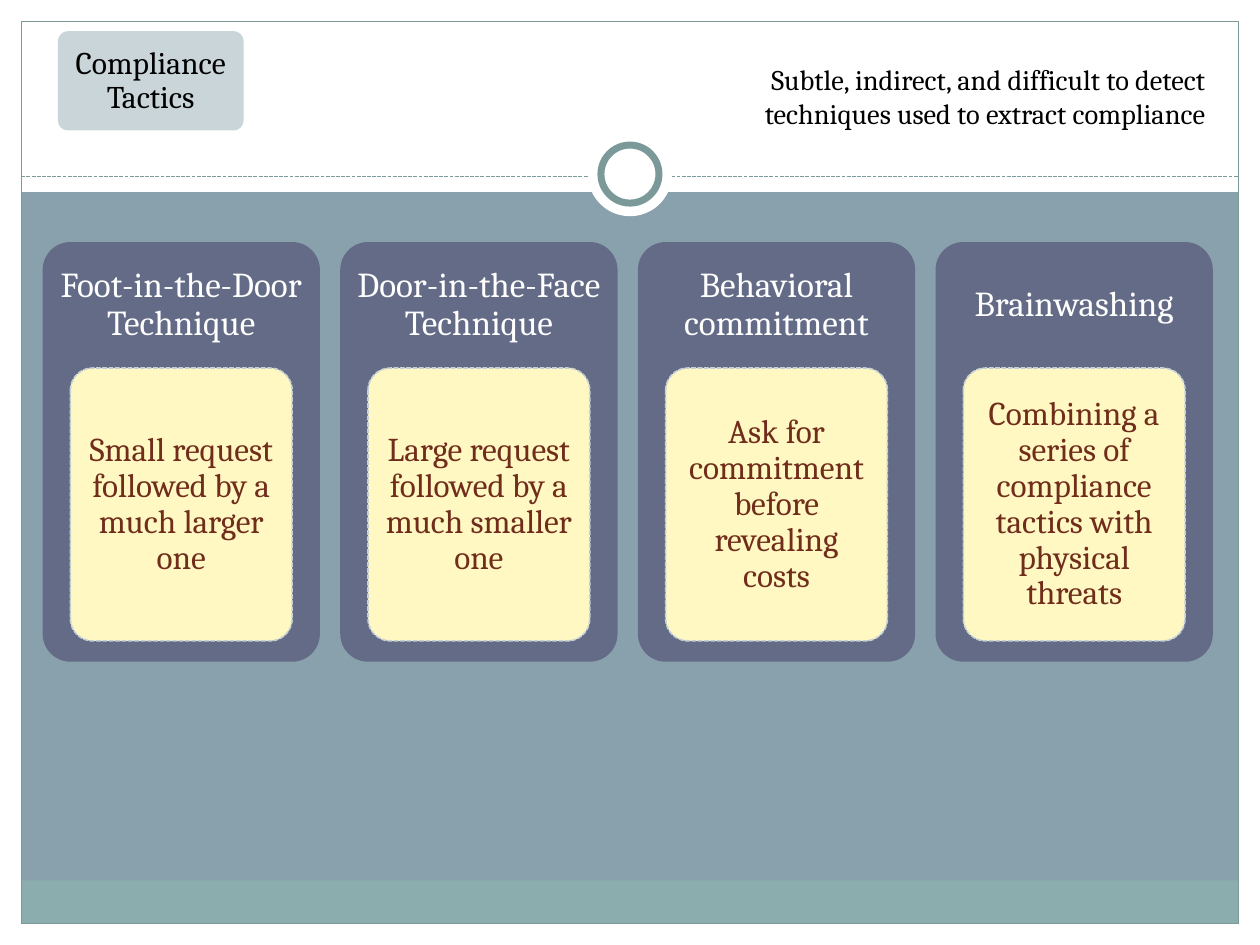
from lxml import etree
from pptx import Presentation
from pptx.dml.color import RGBColor
from pptx.enum.dml import MSO_LINE
from pptx.enum.shapes import MSO_CONNECTOR, MSO_SHAPE
from pptx.enum.text import MSO_ANCHOR, MSO_AUTO_SIZE, PP_ALIGN
from pptx.oxml.ns import qn
from pptx.util import Cm, Pt

RECT, ROUND, OVAL = MSO_SHAPE.RECTANGLE, MSO_SHAPE.ROUNDED_RECTANGLE, MSO_SHAPE.OVAL
CENTER, RIGHT = PP_ALIGN.CENTER, PP_ALIGN.RIGHT
MIDDLE, BOTTOM = MSO_ANCHOR.MIDDLE, MSO_ANCHOR.BOTTOM
DASH = MSO_LINE.SQUARE_DOT  # stored as sysDot, the finest preset
SYSTEM_DASH = "sysDash"

WHITE = RGBColor(0xFF, 0xFF, 0xFF)
BLACK = RGBColor(0x00, 0x00, 0x00)
BACKGROUND = RGBColor(0x88, 0xA1, 0xAD)
FOOTER = RGBColor(0x8C, 0xAD, 0xAE)
FRAME = RGBColor(0x7C, 0x99, 0x9A)
CARD = RGBColor(0x64, 0x6B, 0x86)
PANEL = RGBColor(0xFF, 0xF8, 0xC2)
PANEL_TEXT = RGBColor(0x71, 0x2D, 0x1C)
PALE = RGBColor(0xC5, 0xD1, 0xD7)

FONT = "Cambria"
WIDTH, HEIGHT, MARGIN = 25.4, 19.05, 0.43
TECHNIQUES = [
    ("Foot-in-the-Door Technique", "Small request followed by a much larger one"),
    ("Door-in-the-Face Technique", "Large request followed by a much smaller one"),
    ("Behavioral commitment", "Ask for commitment before revealing costs"),
    ("Brainwashing", "Combining a series of compliance tactics with physical threats"),
]


def set_values(target, values):
    for name, value in values.items():
        setattr(target, name, value)


def set_line(line, color, width, dashed=False):
    line.color.rgb = color
    line.width = Pt(width)
    if dashed:
        line.dash_style = DASH
        line._ln.find(qn("a:prstDash")).set("val", SYSTEM_DASH)


def add_block(page, kind, place, fill=None, line=None):
    shape = page.shapes.add_shape(kind, *map(Cm, place))
    shape.shadow.inherit = False
    if fill is None:
        shape.fill.background()
    else:
        shape.fill.solid()
        shape.fill.fore_color.rgb = fill
    if line:
        set_line(shape.line, *line)
    else:
        shape.line.fill.background()
    if kind == ROUND:
        shape.adjustments[0] = 0.1
    return shape


def write(shape, text, size, color, inset, align=CENTER, anchor=MIDDLE, spacing=0.9):
    side, top = map(Cm, inset)
    frame = shape.text_frame
    set_values(frame, {
        "word_wrap": True, "auto_size": MSO_AUTO_SIZE.NONE, "vertical_anchor": anchor,
        "margin_left": side, "margin_right": side,
        "margin_top": top, "margin_bottom": top,
    })
    para = frame.paragraphs[0]
    set_values(para, {"alignment": align, "line_spacing": spacing})
    span = para.add_run()
    span.text = text
    set_values(span.font, {"name": FONT, "size": Pt(size), "bold": False})
    span.font.color.rgb = color


def add_divider(page, top):
    divider = page.shapes.add_connector(
        MSO_CONNECTOR.STRAIGHT, Cm(MARGIN), Cm(top), Cm(WIDTH - MARGIN), Cm(top))
    set_line(divider.line, FRAME, 0.75, True)
    etree.SubElement(divider._element.spPr, qn("a:effectLst"))


def add_ring(page, middle, diameter, line=None):
    place = (WIDTH / 2 - diameter / 2, middle - diameter / 2, diameter, diameter)
    add_block(page, OVAL, place, WHITE, line)


def add_backdrop(page):
    page.background.fill.solid()
    page.background.fill.fore_color.rgb = BACKGROUND
    inner = WIDTH - 2 * MARGIN
    # White header and margins
    for place in [
        (0, HEIGHT - MARGIN, WIDTH, MARGIN),
        (0, 0, WIDTH, 3.87),
        (0, 0, MARGIN, HEIGHT),
        (WIDTH - MARGIN, 0, MARGIN, HEIGHT),
    ]:
        add_block(page, RECT, place, WHITE)
    # Footer band, frame and dashed divider
    add_block(page, RECT, (MARGIN, 17.75, inner, 0.87), FOOTER)
    add_block(page, RECT, (MARGIN, MARGIN, inner, HEIGHT - 2 * MARGIN), line=(FRAME, 0.75))
    add_divider(page, 3.56)
    # Ring on the divider
    add_ring(page, 3.51, 1.7)
    add_ring(page, 3.51, 1.17, (FRAME, 4))


def add_title(page, text):
    title = page.shapes.title
    set_values(title, dict(zip(("left", "top", "width", "height"),
                               map(Cm, (14.81, 0.64, 9.73, 2.11)))))
    write(title, text, 16.2, BLACK, (0.25, 0.13), RIGHT, BOTTOM, 1.0)
    # Bring the title in front of the backdrop
    page.shapes._spTree.append(title._element)


def add_card(page, left, heading, body):
    top, width, heading_height = 4.88, 5.59, 2.54
    add_block(page, ROUND, (left, top, width, 8.46), CARD)
    box = page.shapes.add_textbox(*map(Cm, (left, top, width, heading_height)))
    write(box, heading, 20, WHITE, (0.21, 0.21))
    panel = add_block(page, ROUND, (left + 0.56, top + heading_height, 4.47, 5.5),
                      PANEL, (PALE, 0.9, True))
    write(panel, body, 19, PANEL_TEXT, (0.13, 0.1))


def add_label(page, text):
    label = add_block(page, ROUND, (1.17, 0.63, 3.74, 2), PALE)
    color = label._element.spPr.find(qn("a:solidFill"))[0]
    etree.SubElement(color, qn("a:alpha"), val="90000")
    write(label, text, 18, BLACK, (0.1, 0.08))


def main():
    deck = Presentation()
    deck.slide_width, deck.slide_height = Cm(WIDTH), Cm(HEIGHT)
    page = deck.slides.add_slide(deck.slide_layouts[5])
    add_backdrop(page)
    add_title(page, "Subtle, indirect, and difficult to detect "
                    "techniques used to extract compliance")
    for index, (heading, body) in enumerate(TECHNIQUES):
        add_card(page, 0.86 + 6 * index, heading, body)
    add_label(page, "Compliance Tactics")
    deck.save("out.pptx")


if __name__ == "__main__":
    main()
